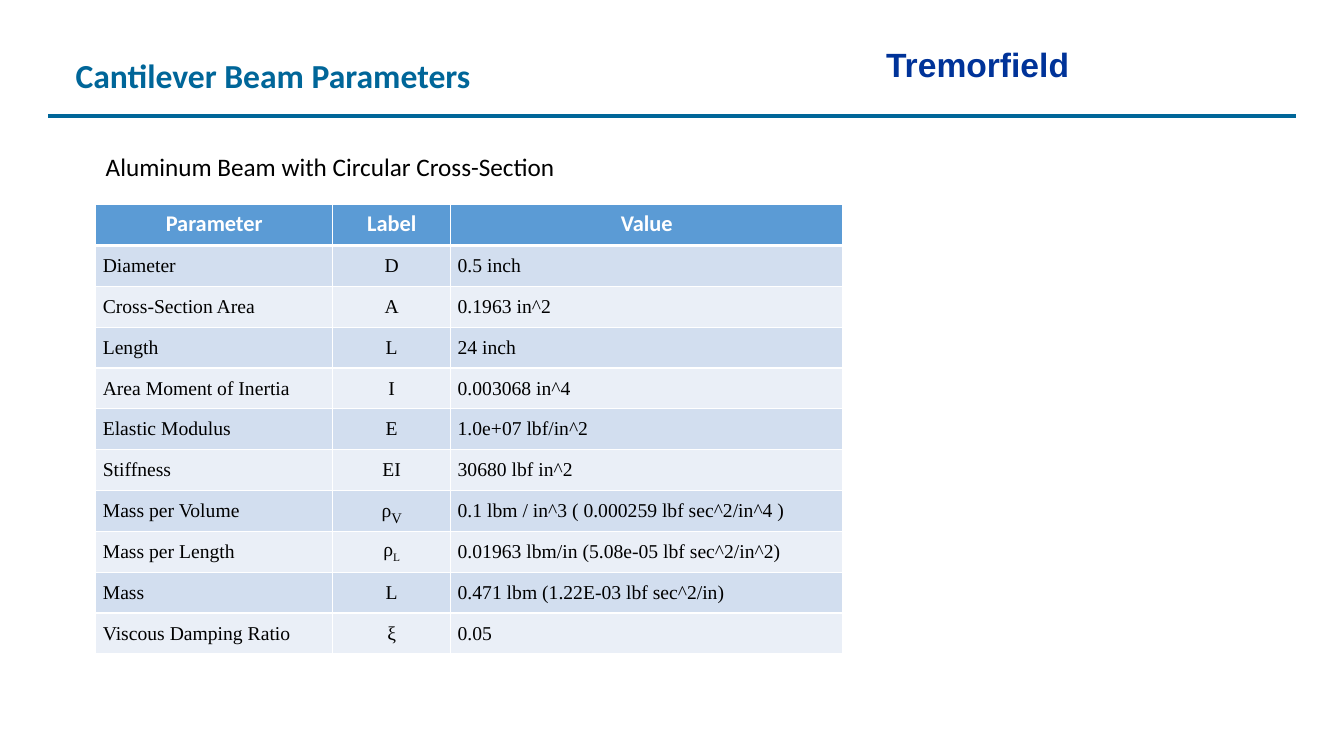
from dataclasses import dataclass

from lxml.etree import SubElement
from pptx import Presentation
from pptx.dml.color import RGBColor
from pptx.enum.shapes import MSO_CONNECTOR
from pptx.enum.text import MSO_ANCHOR, MSO_AUTO_SIZE, PP_ALIGN
from pptx.oxml.ns import qn
from pptx.util import Inches, Pt


@dataclass(frozen=True)
class Theme:
    """Colours, fonts and type sizes of the slide."""

    title_color: str = "006699"
    brand_color: str = "003399"
    text_color: str = "000000"
    white: str = "FFFFFF"
    header_fill: str = "5B9BD5"
    band_fills: tuple = ("D2DEEF", "EAEFF7")
    heading_font: str = "Calibri"
    brand_font: str = "Arial"
    body_font: str = "Times New Roman"
    title_size: int = 24
    subtitle_size: int = 18
    header_size: int = 16
    body_size: int = 14
    large_subscript_size: int = 18


THEME = Theme()
TITLE = "Cantilever Beam Parameters"
BRAND = "Tremorfield"
SUBTITLE = "Aluminum Beam with Circular Cross-Section"
COLUMN_WIDTHS = (2.35, 1.17, 3.89)
TABLE_HEIGHT = 4.46
LABEL_COLUMN = 1
HEADERS = ("Parameter", "Label", "Value")
PARAMETERS = (
    ("Diameter", "D", "0.5 inch"),
    ("Cross-Section Area", "A", "0.1963 in^2"),
    ("Length", "L", "24 inch"),
    ("Area Moment of Inertia", "I", "0.003068 in^4"),
    ("Elastic Modulus", "E", "1.0e+07 lbf/in^2"),
    ("Stiffness", "EI", "30680 lbf in^2"),
    ("Mass per Volume", "ρ", "0.1 lbm / in^3 ( 0.000259 lbf sec^2/in^4 )"),
    ("Mass per Length", "ρ", "0.01963 lbm/in (5.08e-05 lbf sec^2/in^2)"),
    ("Mass", "L", "0.471 lbm (1.22E-03 lbf sec^2/in)"),
    ("Viscous Damping Ratio", "ξ", "0.05"),
)
SUBSCRIPTS = {
    "Mass per Volume": ("V", THEME.large_subscript_size),
    "Mass per Length": ("L", THEME.body_size),
}


def add_run(paragraph, text, font, size, color, bold=False):
    """Append one formatted run to a paragraph and return it."""
    run = paragraph.add_run()
    run.text = text
    run.font.name = font
    run.font.size = Pt(size)
    run.font.bold = bold
    run.font.color.rgb = RGBColor.from_string(color)
    return run


def place_text(shape, box, text, font, size, color, bold=False, wrap=True):
    """Position a text shape and fill it with one left-aligned run."""
    shape.left, shape.top, shape.width, shape.height = map(Inches, box)
    frame = shape.text_frame
    frame.word_wrap = wrap
    frame.auto_size = MSO_AUTO_SIZE.SHAPE_TO_FIT_TEXT
    frame.vertical_anchor = MSO_ANCHOR.TOP
    paragraph = frame.paragraphs[0]
    paragraph.alignment = PP_ALIGN.LEFT
    add_run(paragraph, text, font, size, color, bold)


def add_text(slide, box, *style, **options):
    """Add a text box with one run."""
    place_text(slide.shapes.add_textbox(*map(Inches, box)), box, *style, **options)


def add_rule(slide, left, right, top):
    """Draw the horizontal rule below the title."""
    rule = slide.shapes.add_connector(
        MSO_CONNECTOR.STRAIGHT, Inches(left), Inches(top), Inches(right), Inches(top)
    )
    rule.line.color.rgb = RGBColor.from_string(THEME.title_color)
    rule.line.width = Pt(2.5)
    SubElement(rule._element.spPr, qn("a:effectLst"))


def set_borders(cell, top=1, bottom=1):
    """Give a cell white borders of the given widths in points."""
    properties = cell._tc.get_or_add_tcPr()
    for side, width in (("L", 1), ("R", 1), ("T", top), ("B", bottom)):
        line = SubElement(properties, qn(f"a:ln{side}"), w=str(Pt(width)))
        fill = SubElement(line, qn("a:solidFill"))
        SubElement(fill, qn("a:srgbClr"), val=THEME.white)


def fill_cell(cell, color):
    """Fill a cell with a solid colour."""
    cell.fill.solid()
    cell.fill.fore_color.rgb = RGBColor.from_string(color)


def format_header(cell, text):
    """Write a column heading."""
    set_borders(cell, bottom=3)
    fill_cell(cell, THEME.header_fill)
    paragraph = cell.text_frame.paragraphs[0]
    paragraph.alignment = PP_ALIGN.CENTER
    add_run(paragraph, text, THEME.heading_font, THEME.header_size, THEME.white, True)


def format_body(cell, text, row, centered, subscript):
    """Write a parameter cell with an optional subscript."""
    set_borders(cell, top=3 if row == 0 else 1)
    fill_cell(cell, THEME.band_fills[row % 2])
    cell.vertical_anchor = MSO_ANCHOR.MIDDLE
    cell.margin_left = cell.margin_right = Inches(0.07)
    cell.margin_top = cell.margin_bottom = 0
    paragraph = cell.text_frame.paragraphs[0]
    paragraph.alignment = PP_ALIGN.CENTER if centered else PP_ALIGN.LEFT
    add_run(paragraph, text, THEME.body_font, THEME.body_size, THEME.text_color)
    if subscript:
        symbol, size = subscript
        run = add_run(paragraph, symbol, THEME.body_font, size, THEME.text_color)
        run._r.get_or_add_rPr().set("baseline", "-25000")


def add_parameter_table(slide, left, top):
    """Add the table of beam parameters."""
    row_count = len(PARAMETERS) + 1
    table = slide.shapes.add_table(
        row_count, len(HEADERS), Inches(left), Inches(top),
        Inches(sum(COLUMN_WIDTHS)), Inches(TABLE_HEIGHT),
    ).table
    for column, width in zip(table.columns, COLUMN_WIDTHS):
        column.width = Inches(width)
    for table_row in table.rows:
        table_row.height = Inches(TABLE_HEIGHT / row_count)
    for column, text in enumerate(HEADERS):
        format_header(table.cell(0, column), text)
    for row, values in enumerate(PARAMETERS):
        for column, text in enumerate(values):
            is_label = column == LABEL_COLUMN
            subscript = SUBSCRIPTS.get(values[0]) if is_label else None
            format_body(table.cell(row + 1, column), text, row, is_label, subscript)


def main():
    """Build and save the slide."""
    presentation = Presentation()
    presentation.slide_width = Inches(13.33)
    presentation.slide_height = Inches(7.5)
    slide = presentation.slides.add_slide(presentation.slide_layouts[5])
    add_text(slide, (8.69, 0.39, 2.33, 0.5), BRAND, THEME.brand_font,
             THEME.title_size, THEME.brand_color, bold=True, wrap=False)
    add_rule(slide, 0.48, 12.85, 1.15)
    place_text(slide.shapes.title, (0.65, 0.49, 7.05, 0.5), TITLE, THEME.heading_font,
               THEME.title_size, THEME.title_color, bold=True)
    add_parameter_table(slide, 0.95, 2.03)
    add_text(slide, (0.95, 1.45, 7.41, 0.4), SUBTITLE, THEME.heading_font,
             THEME.subtitle_size, THEME.text_color)
    presentation.save("out.pptx")


main()
